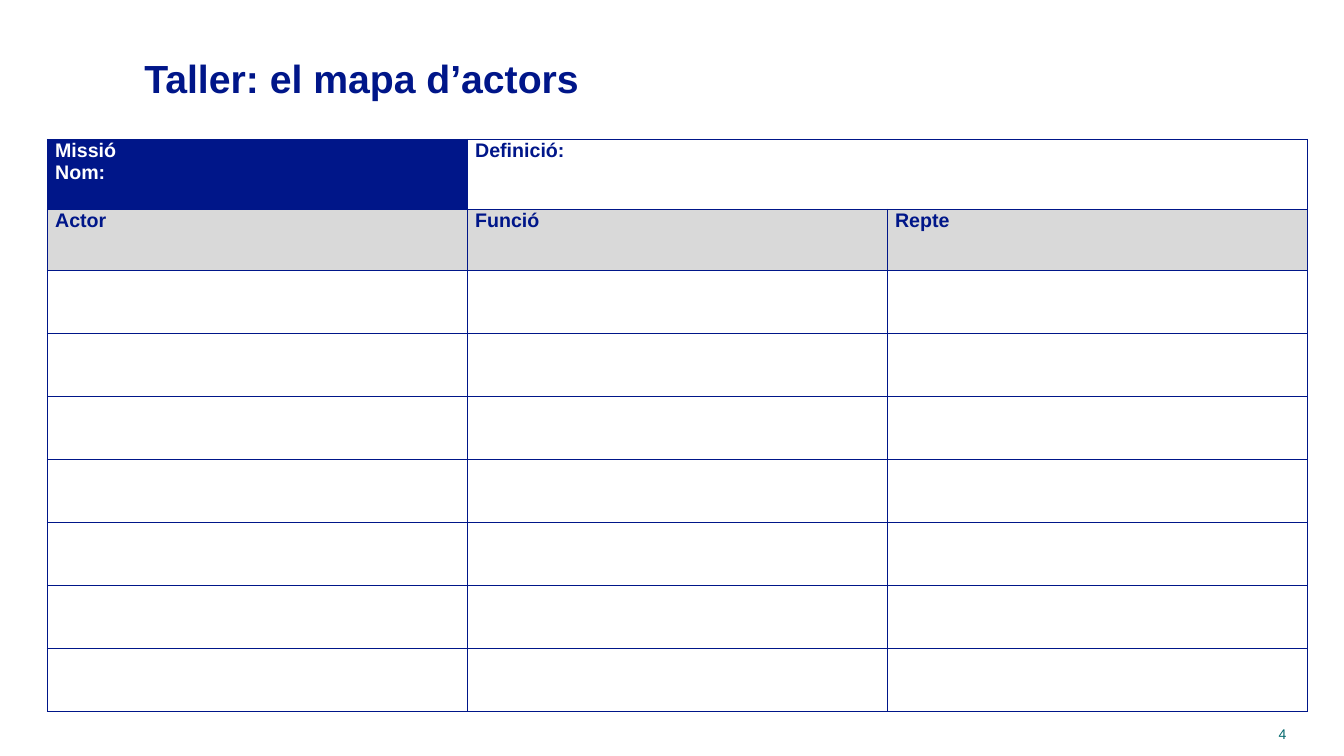
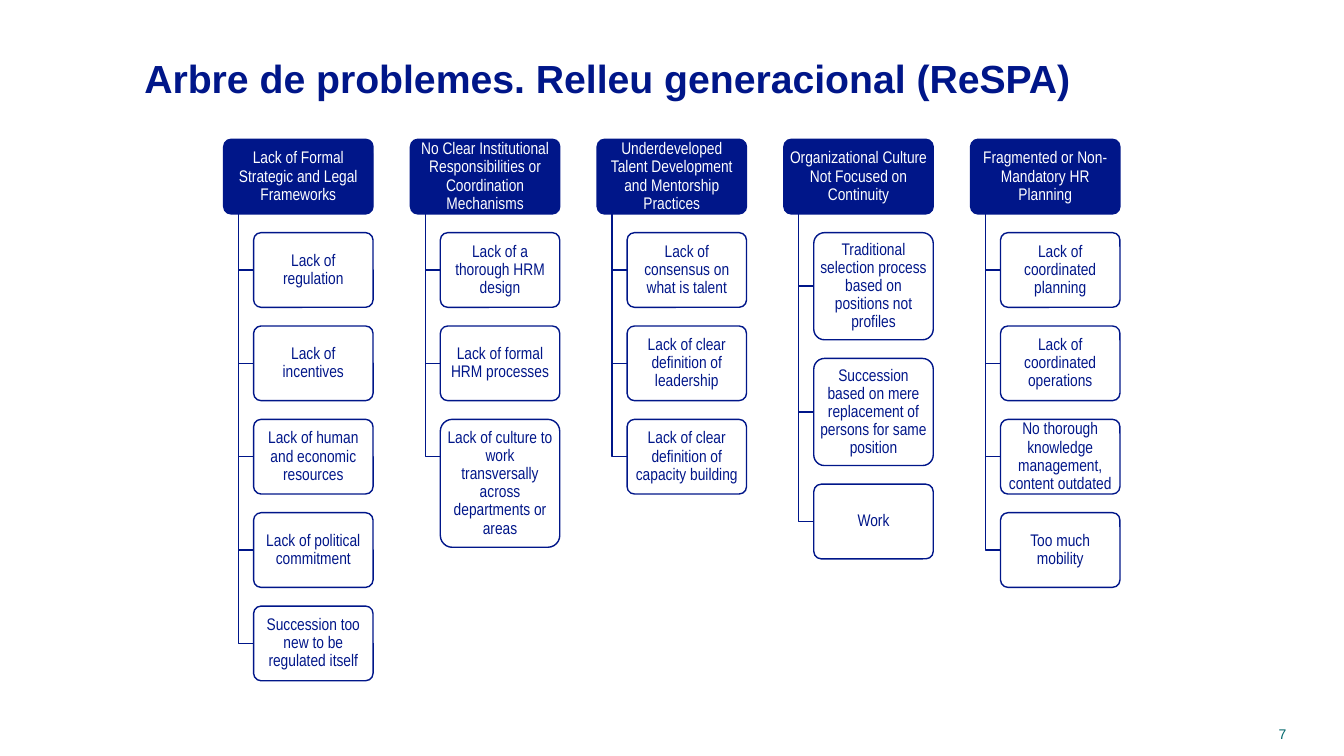
import pptx
import pptx.dml.color
import pptx.enum.shapes
import pptx.enum.text
import pptx.oxml.ns
import pptx.util
from lxml import etree

Pt = pptx.util.Pt
RGB = pptx.dml.color.RGBColor
Align = pptx.enum.text.PP_ALIGN
Anchor = pptx.enum.text.MSO_ANCHOR

NAVY = RGB(0x00, 0x16, 0x89)
TEAL = RGB(0x00, 0x67, 0x6C)
GREY = RGB(0xD9, 0xD9, 0xD9)
WHITE = RGB(0xFF, 0xFF, 0xFF)

# Tree measures, all drawn from the size of one head box
HEAD_W, HEAD_H = 106.7, 53.35
GAP = HEAD_H / 4
STEP = HEAD_W * 1.25
STEM = HEAD_W * 0.1
INDENT = HEAD_W * 0.2
MID, TALL = 76.5, 91.4

HEADS = ["Missió\vNom:", "Definició:"]
LABELS = ["Actor", "Funció", "Repte"]
ROWS = [50, 43.5] + [45] * 7

# Each cause: text, then box height and joint depth where they differ
TREE = [
    ("Lack of Formal Strategic and Legal Frameworks", [
        ("Lack of regulation",),
        ("Lack of incentives",),
        ("Lack of human and economic resources",),
        ("Lack of political commitment",),
        ("Succession too new to be regulated itself",)]),
    ("No Clear Institutional Responsibilities or Coordination Mechanisms", [
        ("Lack of a thorough HRM design",),
        ("Lack of formal HRM processes",),
        ("Lack of culture to work transversally across departments or areas",
         TALL, HEAD_H / 2)]),
    ("Underdeveloped Talent Development and Mentorship Practices", [
        ("Lack of consensus on what is talent",),
        ("Lack of clear definition of leadership",),
        ("Lack of clear definition of capacity building",)]),
    ("Organizational Culture Not Focused on Continuity", [
        ("Traditional selection process based on positions not profiles", MID),
        ("Succession based on mere replacement of persons for same position",
         MID),
        ("Work",)]),
    ("Fragmented or Non-Mandatory HR Planning", [
        ("Lack of coordinated planning",),
        ("Lack of coordinated operations",),
        ("No thorough knowledge management, content outdated",),
        ("Too much mobility",)]),
]


def style(para, size, color, bold=False, face="Arial"):
    font = para.font
    font.name, font.size, font.bold = face, Pt(size), bold
    font.color.rgb = color


def label(slide, text, x, y, w, h, size, color, bold=False, align=Align.LEFT):
    box = slide.shapes.add_textbox(Pt(x), Pt(y), Pt(w), Pt(h))
    frame = box.text_frame
    frame.word_wrap = True
    frame.vertical_anchor = Anchor.MIDDLE
    para = frame.paragraphs[0]
    para.text, para.alignment = text, align
    style(para, size, color, bold)


def page(deck, title, number):
    """Blank slide with the shared title and page number."""
    slide = deck.slides.add_slide(deck.slide_layouts[6])
    label(slide, title, 96, 33, 818, 45, 28, NAVY, bold=True)
    label(slide, number, 865.4, 514, 60.5, 21, 10, TEAL, align=Align.RIGHT)
    return slide


def border(cell):
    props = cell._tc.get_or_add_tcPr()
    for side in ("a:lnL", "a:lnR", "a:lnT", "a:lnB"):
        line = etree.SubElement(props, pptx.oxml.ns.qn(side), w=str(Pt(1)))
        fill = etree.SubElement(line, pptx.oxml.ns.qn("a:solidFill"))
        etree.SubElement(fill, pptx.oxml.ns.qn("a:srgbClr"), val=str(NAVY))


def write(cell, text, color):
    para = cell.text_frame.paragraphs[0]
    para.text = text
    style(para, 14, color, bold=True)


def grid(slide, x, y, w):
    """Actor table: mission row, label row, empty rows to fill in."""
    cols = len(LABELS)
    table = slide.shapes.add_table(len(ROWS), cols, Pt(x), Pt(y), Pt(w),
                                   Pt(sum(ROWS))).table
    table.first_row = table.horz_banding = False
    for col in table.columns:
        col.width = Pt(w / cols)
    for r, high in enumerate(ROWS):
        table.rows[r].height = Pt(high)
        for c in range(cols):
            cell = table.cell(r, c)
            cell.margin_left = cell.margin_right = Pt(5.4)
            cell.margin_top = cell.margin_bottom = 0
            border(cell)
            cell.fill.solid()
            cell.fill.fore_color.rgb = GREY if r == 1 else WHITE

    # Mission row and labels
    table.cell(0, 0).fill.fore_color.rgb = NAVY
    table.cell(0, 1).merge(table.cell(0, 2))
    for c, (text, color) in enumerate(zip(HEADS, (WHITE, NAVY))):
        write(table.cell(0, c), text, color)
    for c, text in enumerate(LABELS):
        write(table.cell(1, c), text, NAVY)


def card(slide, text, x, y, w, h, fill, color):
    kind = pptx.enum.shapes.MSO_SHAPE.ROUNDED_RECTANGLE
    shape = slide.shapes.add_shape(kind, Pt(x), Pt(y), Pt(w), Pt(h))
    shape.adjustments[0] = 0.1
    shape.shadow.inherit = False
    shape.fill.solid()
    shape.fill.fore_color.rgb = fill
    shape.line.color.rgb, shape.line.width = NAVY, Pt(1)
    frame = shape.text_frame
    frame.word_wrap = True
    frame.vertical_anchor = Anchor.MIDDLE
    frame.margin_left = frame.margin_right = Pt(2.3)
    frame.margin_top = frame.margin_bottom = Pt(1.5)
    para = frame.paragraphs[0]
    para.text, para.alignment, para.line_spacing = text, Align.CENTER, 0.9
    style(para, 12, color, face="Arial Narrow")


def elbow(slide, x, top, end, low):
    """Line down from a head, then right to a cause."""
    path = slide.shapes.build_freeform(Pt(x), Pt(top))
    path.add_line_segments([(Pt(x), Pt(low)), (Pt(end), Pt(low))], close=False)
    shape = path.convert_to_shape()
    shape.shadow.inherit = False
    shape.fill.background()
    shape.line.color.rgb, shape.line.width = NAVY, Pt(1)


def branch(slide, x, y, head, causes):
    """One head with its causes stacked below."""
    card(slide, head, x, y, HEAD_W, HEAD_H, NAVY, WHITE)
    base = y + HEAD_H
    top = base + GAP
    for text, *size in causes:
        high = size[0] if size else HEAD_H
        joint = size[1] if len(size) > 1 else high / 2
        elbow(slide, x + STEM, base, x + INDENT, top + joint)
        card(slide, text, x + INDENT, top, HEAD_W - INDENT, high, WHITE, NAVY)
        top += high + GAP


def main():
    deck = pptx.Presentation()
    deck.slide_width, deck.slide_height = Pt(960), Pt(540)

    grid(page(deck, "Taller: el mapa d’actors", "4"), 34, 99.7, 900)

    slide = page(deck, "Arbre de problemes. Relleu generacional (ReSPA)", "7")
    for i, (head, causes) in enumerate(TREE):
        branch(slide, 159.8 + i * STEP, 99.5, head, causes)

    deck.save("out.pptx")


if __name__ == "__main__":
    main()
